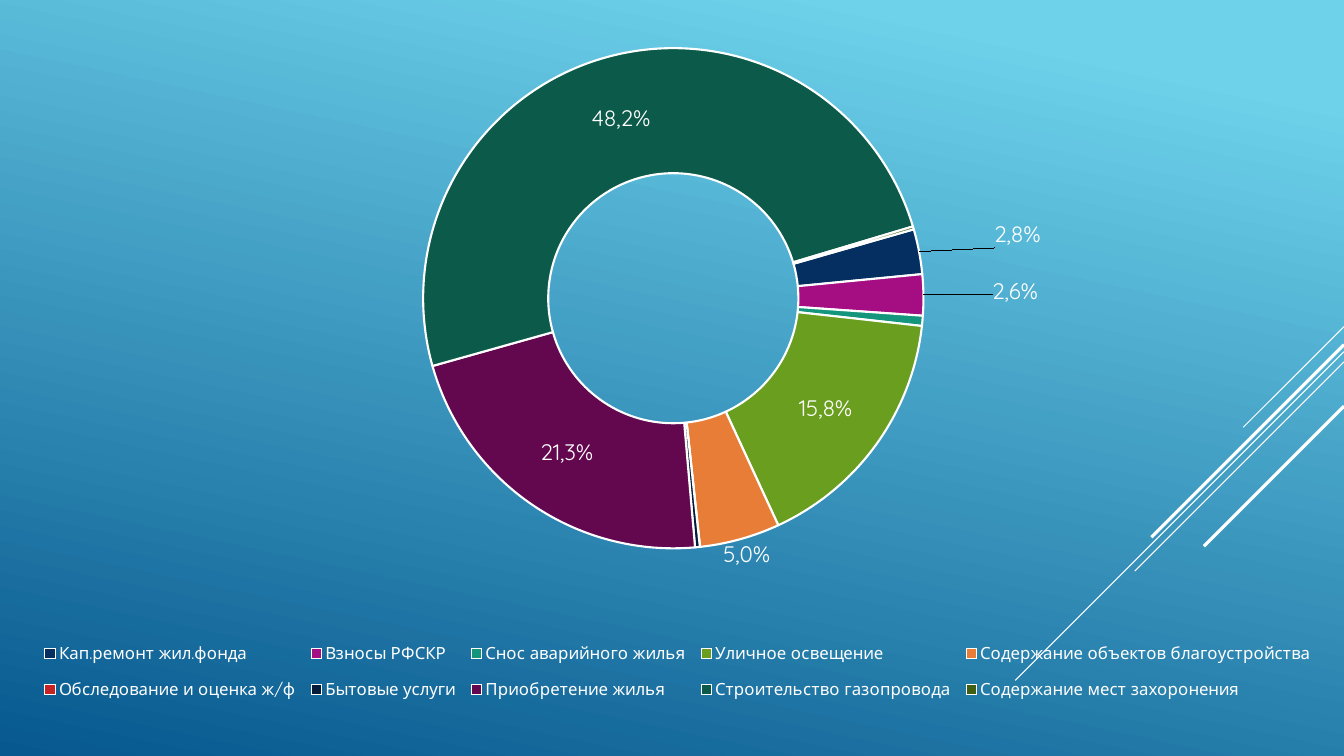
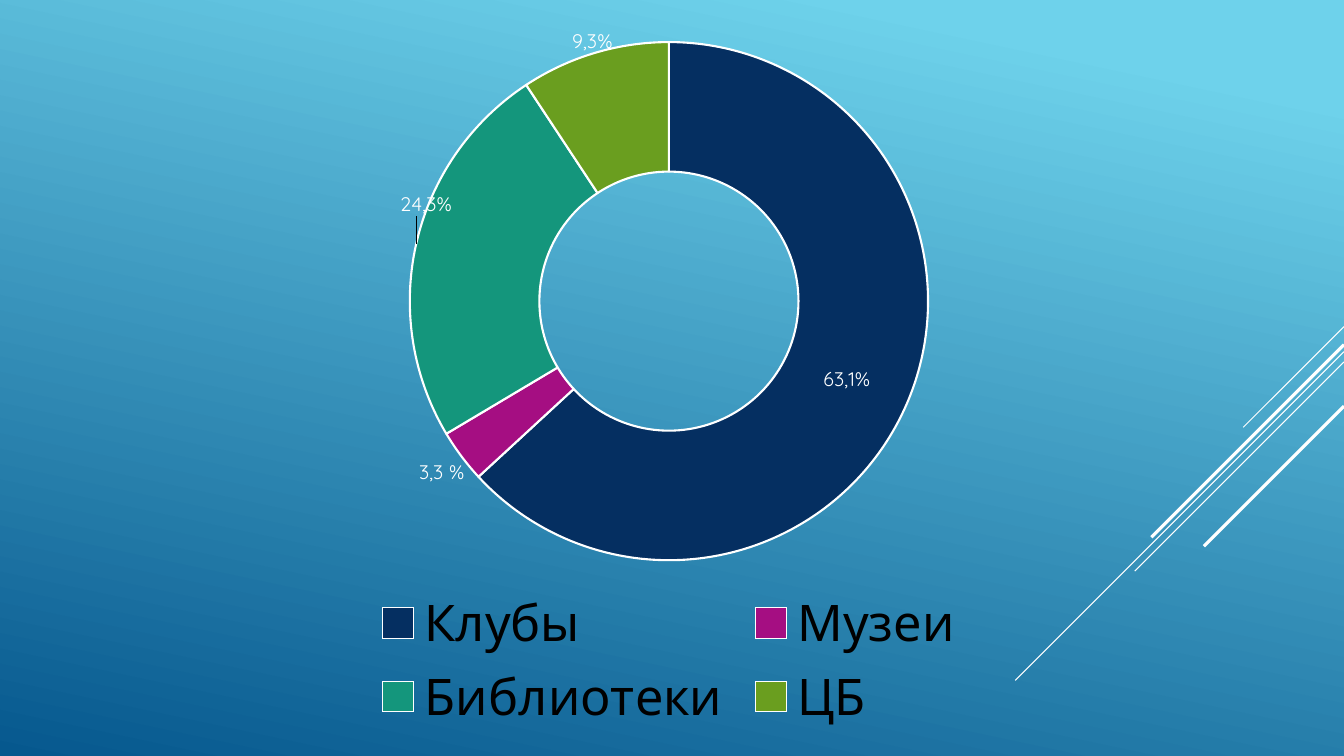
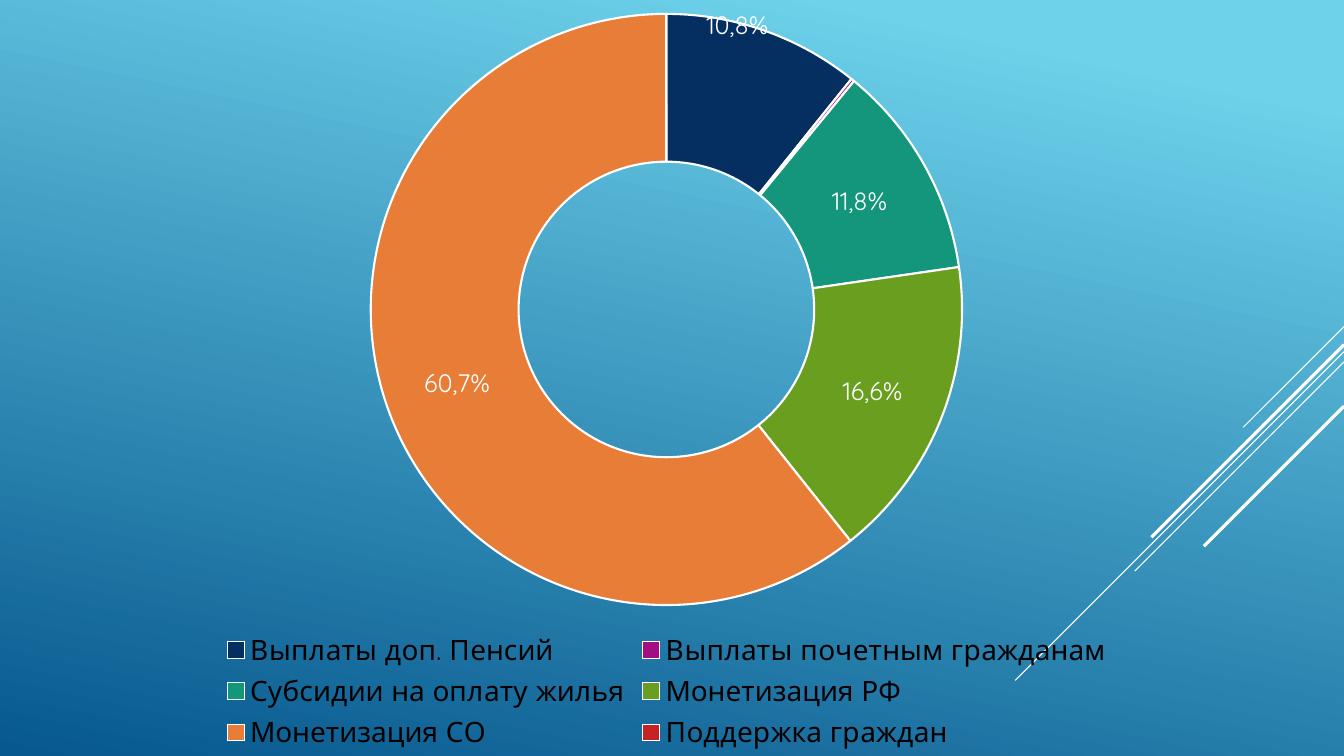
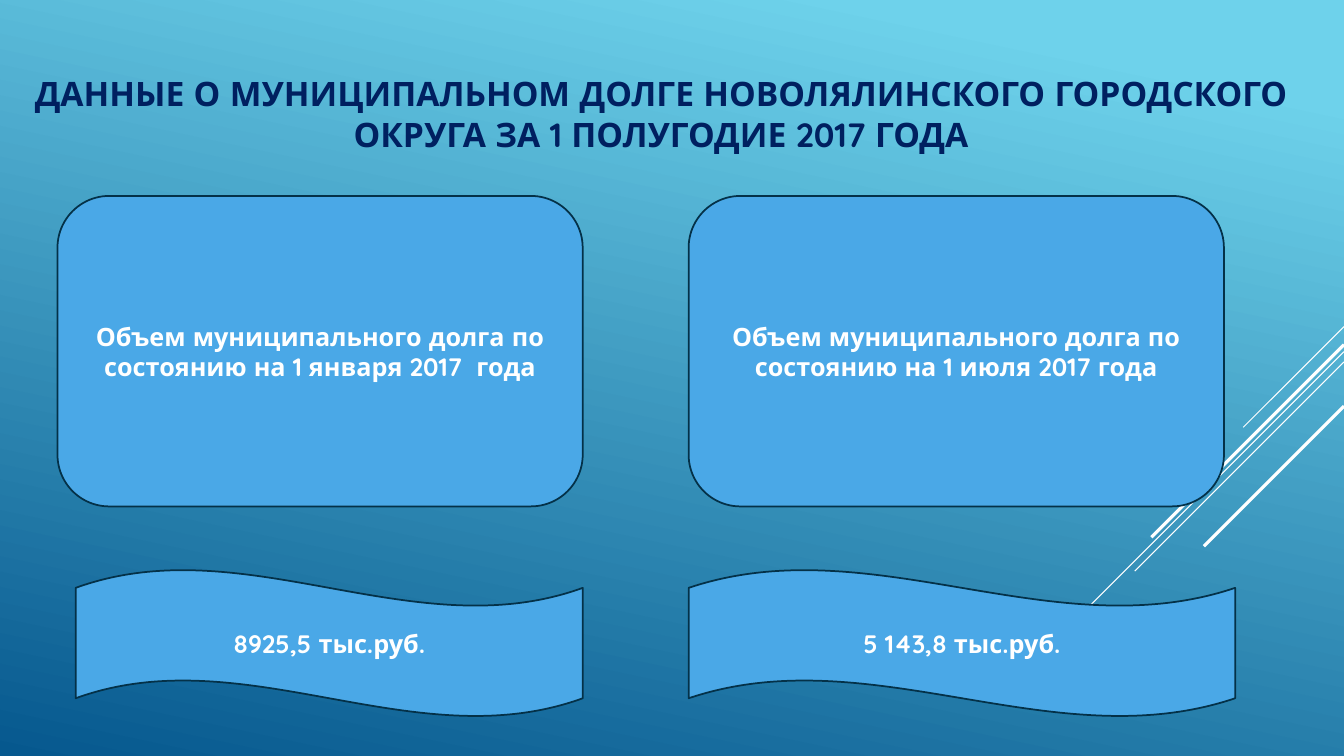
from dataclasses import dataclass

from lxml import etree
from pptx import Presentation
from pptx.chart.data import CategoryChartData
from pptx.dml.color import RGBColor
from pptx.enum.chart import XL_CHART_TYPE, XL_LEGEND_POSITION
from pptx.enum.shapes import MSO_CONNECTOR, MSO_SHAPE
from pptx.enum.text import MSO_ANCHOR, PP_ALIGN
from pptx.oxml.ns import qn
from pptx.util import Inches, Pt

DOUGHNUT = XL_CHART_TYPE.DOUGHNUT
BOTTOM = XL_LEGEND_POSITION.BOTTOM
STRAIGHT = MSO_CONNECTOR.STRAIGHT
ROUNDED, WAVE = MSO_SHAPE.ROUNDED_RECTANGLE, MSO_SHAPE.WAVE
MIDDLE, CENTER = MSO_ANCHOR.MIDDLE, PP_ALIGN.CENTER

FONT = "Quicksand"
COLORS = {
    "sky": "6ED2EB", "deep": "06588E", "white": "FFFFFF", "black": "000000",
    "title": "002060", "panel": "4AA8E7", "outline": "043148",
    "navy": "052F61", "magenta": "A50E82", "teal": "14967C", "green": "6A9E1F",
    "orange": "E87D37", "red": "C62324", "ink": "031C3A", "plum": "63084E",
    "pine": "0C5A4A", "olive": "405F13",
}
SLICE_COLORS = ("navy", "magenta", "teal", "green", "orange",
                "red", "ink", "plum", "pine", "olive")

# The slide is a grid of 100 columns by 100 rows
WIDTH, HEIGHT = Inches(13.33), Inches(7.5)
COLUMN, ROW = WIDTH / 100, HEIGHT / 100


@dataclass(frozen=True)
class Area:
    """Columns and rows of the slide, or percents of a chart."""
    left: float
    top: float
    width: float
    height: float

    def emu(self) -> tuple[int, int, int, int]:
        return (round(self.left * COLUMN), round(self.top * ROW),
                round(self.width * COLUMN), round(self.height * ROW))


@dataclass(frozen=True)
class Ray:
    """Diagonal from the right edge; top and run are in rows."""
    top: float
    run: float
    weight: float


@dataclass(frozen=True)
class Slice:
    name: str
    value: float
    label: str = ""
    shift: tuple[float, float] = (0, 0)  # percent of the chart's size


@dataclass(frozen=True)
class Ring:
    area: Area
    slices: list[Slice]
    label_size: int
    legend_size: int
    legend_color: str
    hole: int
    start: int = 0
    plot: Area | None = None
    legend: Area | None = None


@dataclass(frozen=True)
class Panel:
    shape: MSO_SHAPE
    area: Area
    text: str


RAYS = [Ray(43.2, 13.33, 0.75), Ray(46.53, 43.47, 0.75), Ray(47.87, 27.67, 0.75),
        Ray(45.6, 25.47, 2.25), Ray(53.73, 18.53, 2.25)]

RINGS = [
    # Housing and utilities
    Ring(Area(1.05, 4.13, 98.2, 93.33), [
        Slice("Кап.ремонт жил.фонда", 719, "2,8%", (12.1, -4.1)),
        Slice("Взносы РФСКР", 656, "2,6% ", (11.9, -0.6)),
        Slice("Снос аварийного жилья", 162),
        Slice("Уличное освещение", 4041, "15,8%"),
        Slice("Содержание объектов благоустройства", 1283, "5,0%", (1.77, 10.6)),
        Slice("Обследование и оценка ж/ф", 2),
        Slice("Бытовые услуги", 76),
        Slice("Приобретение жилья", 5447, "21,3%"),
        Slice("Строительство газопровода", 12300, "48,2%"),
        Slice("Содержание мест захоронения", 47),
    ], 16, 12, "white", 9, 74,
        plot=Area(30.7, 2.4, 38.5, 70.9), legend=Area(1.6, 84.5, 97.4, 12.5)),
    # Culture
    Ring(Area(1.95, 3.73, 95.65, 93.87), [
        Slice("Клубы", 13887, "63,1%"),
        Slice("Музеи", 727, "3,3 %", (-5.55, 7.7)),
        Slice("Библиотеки", 5338, "24,3%", (-4.15, -7.6)),
        Slice("ЦБ", 2042, "9,3%", (-1.6, -11.1)),
    ], 14, 36, "black", 7),
    # Social support
    Ring(Area(0, 0, 99.17, 100), [
        Slice("Выплаты доп. Пенсий", 4267, "10,8%", (-0.2, -9.9)),
        Slice("Выплаты почетным гражданам", 72),
        Slice("Субсидии на оплату жилья", 4664, "11,8%"),
        Slice("Монетизация РФ", 6582, "16,6%"),
        Slice("Монетизация СО", 24055, "60,7%"),
        Slice("Поддержка граждан", 6),
    ], 18, 20, "black", 6),
]

DEBT_TITLE = ("ДАННЫЕ О МУНИЦИПАЛЬНОМ ДОЛГЕ НОВОЛЯЛИНСКОГО ГОРОДСКОГО "
              "ОКРУГА ЗА 1 ПОЛУГОДИЕ 2017 ГОДА")
DEBT_PANELS = [
    Panel(ROUNDED, Area(4.28, 25.92, 39.08, 41.07),
          "Объем муниципального долга по состоянию на 1 января 2017  года"),
    Panel(ROUNDED, Area(51.24, 25.92, 39.83, 41.07),
          "Объем муниципального долга по состоянию на 1 июля 2017 года"),
    Panel(WAVE, Area(51.24, 75.33, 40.66, 19.47), "5 143,8 тыс.руб."),
    Panel(WAVE, Area(5.63, 75.33, 37.73, 19.47), "8925,5 тыс.руб."),
]


def rgb(name: str) -> RGBColor:
    return RGBColor.from_string(COLORS[name])


def style_font(font, size: float, color: str = "white", bold: bool = False) -> None:
    font.name, font.size, font.bold = FONT, Pt(size), bold
    font.color.rgb = rgb(color)


def write_text(frame, text: str, *, size: float, color: str = "white",
               bold: bool = False) -> None:
    paragraph = frame.paragraphs[0]
    paragraph.alignment = CENTER
    run = paragraph.add_run()
    run.text = text
    style_font(run.font, size, color, bold)


def add_base_slide(deck):
    """Blank slide with the shared gradient and diagonal rays."""
    slide = deck.slides.add_slide(deck.slide_layouts[6])
    fill = slide.background.fill
    fill.gradient()
    fill.gradient_angle = 360 - 102
    for stop, color, position in zip(fill.gradient_stops, ("sky", "deep"), (0.1, 1)):
        stop.color.rgb = rgb(color)
        stop.position = position
    for ray in RAYS:
        top, run = round(ray.top * ROW), round(ray.run * ROW)
        line = slide.shapes.add_connector(STRAIGHT, WIDTH, top, WIDTH - run, top + run)
        line.line.color.rgb = rgb("white")
        line.line.width = Pt(ray.weight)
        etree.SubElement(line._element.spPr, qn("a:effectLst"))
    return slide


def manual_layout(parts: dict[str, object]):
    layout = etree.Element(qn("c:layout"))
    manual = etree.SubElement(layout, qn("c:manualLayout"))
    for tag, value in parts.items():
        etree.SubElement(manual, qn(f"c:{tag}")).set("val", str(value))
    return layout


def edge_layout(area: Area) -> dict[str, object]:
    return {"xMode": "edge", "yMode": "edge", "x": area.left / 100, "y": area.top / 100,
            "w": area.width / 100, "h": area.height / 100}


def add_ring(slide, ring: Ring) -> None:
    data = CategoryChartData()
    data.categories = [part.name for part in ring.slices]
    data.add_series("Series 1", [part.value for part in ring.slices])
    chart = slide.shapes.add_chart(DOUGHNUT, *ring.area.emu(), data).chart
    style_font(chart.font, 10)
    chart.has_title = False
    chart.has_legend = True
    chart.legend.position = BOTTOM
    chart.legend.include_in_layout = False
    style_font(chart.legend.font, ring.legend_size, ring.legend_color)

    # Slices and their labels
    plot = chart.plots[0]
    plot.vary_by_categories = True
    series = plot.series[0]
    series.data_labels.show_value = True
    style_font(series.data_labels.font, ring.label_size, bold=True)
    for index, (part, color) in enumerate(zip(ring.slices, SLICE_COLORS)):
        point = series.points[index]
        point.format.fill.solid()
        point.format.fill.fore_color.rgb = rgb(color)
        point.format.line.color.rgb = rgb("white")
        point.format.line.width = Pt(1.5)
        write_text(point.data_label.text_frame, part.label, size=ring.label_size)

    # Moved labels, and slices without one
    root = plot._element
    for label in root.iter(qn("c:dLbl")):
        number = label.find(qn("c:idx"))
        part = ring.slices[int(number.get("val"))]
        if not part.label:
            for child in list(label)[1:]:
                label.remove(child)
            etree.SubElement(label, qn("c:delete")).set("val", "1")
        elif any(part.shift):
            x, y = part.shift
            number.addnext(manual_layout({"x": x / 100, "y": y / 100}))

    # Ring geometry and fixed places
    for tag, value in (("holeSize", ring.hole), ("firstSliceAng", ring.start)):
        root.find(qn(f"c:{tag}")).set("val", str(value))
    if ring.plot:
        plot_area = root.getparent()
        for old in plot_area.findall(qn("c:layout")):
            plot_area.remove(old)
        plot_area.insert(0, manual_layout({"layoutTarget": "inner",
                                           **edge_layout(ring.plot)}))
    if ring.legend:
        legend = chart.legend._element
        for old in legend.findall(qn("c:layout")):
            legend.remove(old)
        legend.find(qn("c:legendPos")).addnext(manual_layout(edge_layout(ring.legend)))


def add_panel(slide, panel: Panel) -> None:
    shape = slide.shapes.add_shape(panel.shape, *panel.area.emu())
    shape.shadow.inherit = False
    shape.fill.solid()
    shape.fill.fore_color.rgb = rgb("panel")
    shape.line.color.rgb = rgb("outline")
    shape.line.width = Pt(1.25)
    shape.text_frame.word_wrap = True
    shape.text_frame.vertical_anchor = MIDDLE
    write_text(shape.text_frame, panel.text, size=18, bold=True)


def add_title(slide, text: str) -> None:
    frame = slide.shapes.add_textbox(*Area(0.83, 4, 96.7, 22).emu()).text_frame
    frame.word_wrap = True
    frame.vertical_anchor = MIDDLE
    write_text(frame, text, size=24, color="title", bold=True)


def main() -> None:
    deck = Presentation()
    deck.slide_width, deck.slide_height = WIDTH, HEIGHT
    for ring in RINGS:
        add_ring(add_base_slide(deck), ring)

    # Municipal debt
    debt = add_base_slide(deck)
    add_title(debt, DEBT_TITLE)
    for panel in DEBT_PANELS:
        add_panel(debt, panel)
    deck.save("out.pptx")


if __name__ == "__main__":
    main()
